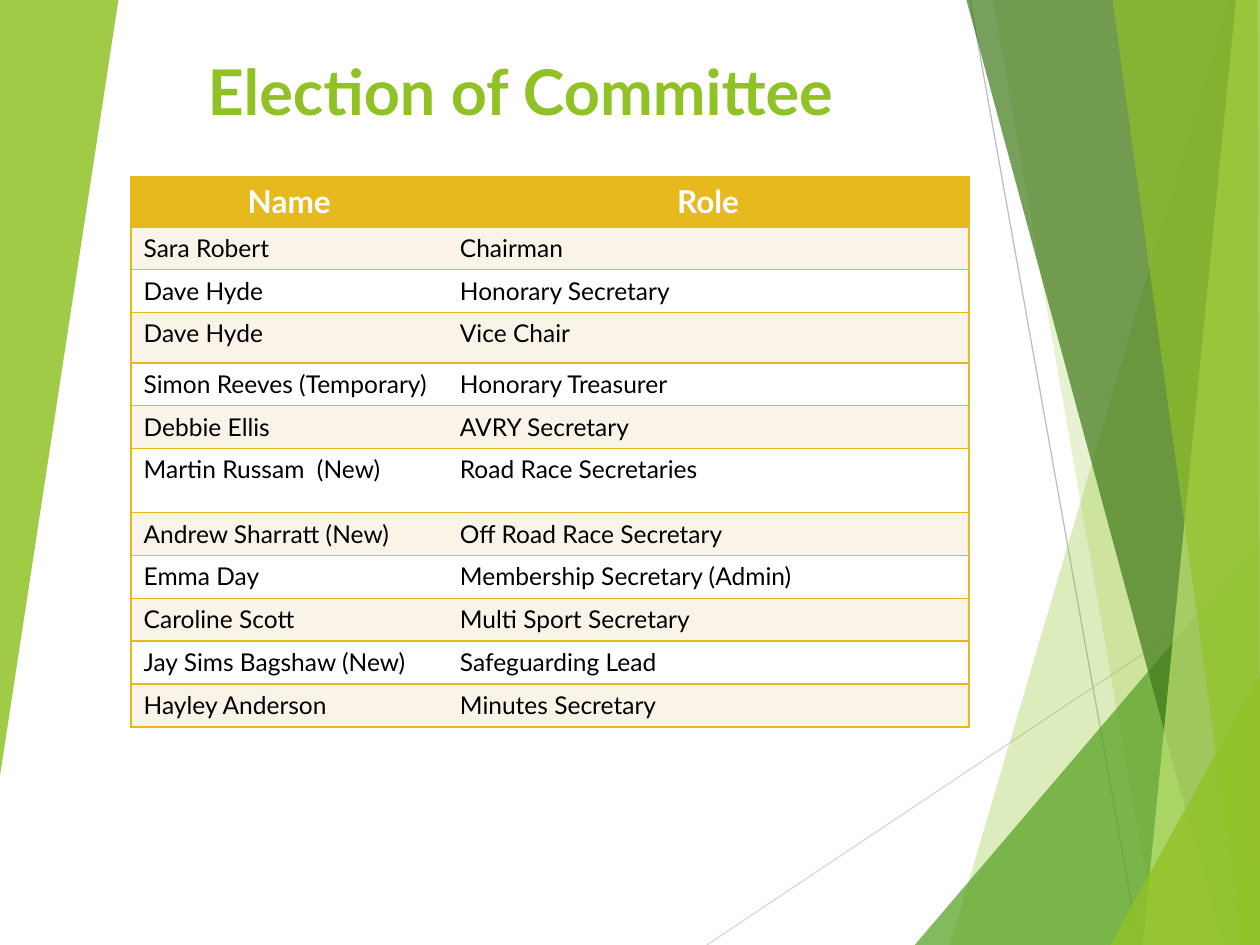
from lxml.etree import SubElement
from pptx import Presentation
from pptx.dml.color import RGBColor
from pptx.enum.shapes import MSO_CONNECTOR
from pptx.enum.text import MSO_ANCHOR, PP_ALIGN
from pptx.oxml.ns import qn
from pptx.util import Inches, Pt

GREEN, GOLD, CREAM, WHITE = "90C226", "E6B91E", "FAF3E8", "FFFFFF"

LINES = [((5.61, 7.5), (10, 4.57), "D9D9D9"),
         ((7.7, 0), (9.04, 7.5), "BFBFBF")]

# Corner points, colour and opacity in percent, from back to front
SHARDS = [
    ([(9.75, 0), (7.54, 7.5), (10, 7.5), (10, 0)], GREEN, 30),
    ([(7.88, 0), (9.19, 7.5), (10, 7.5), (10, 0)], GREEN, 20),
    ([(7.26, 7.5), (10, 4.29), (10, 7.5)], "54A021", 72),
    ([(7.67, 0), (9.7, 7.5), (10, 7.5), (10, 0)], "3F7819", 70),
    ([(9.81, 0), (9.07, 7.5), (10, 7.5), (10, 0)], "C0E474", 70),
    ([(8.83, 0), (9.86, 7.5), (10, 7.5), (9.98, 0)], GREEN, 65),
    ([(8.81, 7.5), (10, 5.35), (10, 7.5)], GREEN, 80),
    ([(0, 0), (0.94, 0), (0, 6.16)], GREEN, 85),
]

ROWS = [
    ("Name", "Role"),
    ("Sara Robert", "Chairman"),
    ("Dave Hyde", "Honorary Secretary"),
    ("Dave Hyde", "Vice Chair"),
    ("Simon Reeves (Temporary)", "Honorary Treasurer"),
    ("Debbie Ellis", "AVRY Secretary"),
    ("Martin Russam  (New)", "Road Race Secretaries"),
    ("Andrew Sharratt (New)", "Off Road Race Secretary"),
    ("Emma Day", "Membership Secretary (Admin)"),
    ("Caroline Scott", "Multi Sport Secretary"),
    ("Jay Sims Bagshaw (New)", "Safeguarding Lead"),
    ("Hayley Anderson", "Minutes Secretary"),
]
WIDTHS = (2.51, 4.14)
HEIGHT = 0.34
TALL = {0: 0.4, 3: 0.4, 6: 0.51}


def rgb(code):
    return RGBColor.from_string(code)


def write(frame, text, size=14, color="000000", bold=False, align=PP_ALIGN.LEFT):
    para = frame.paragraphs[0]
    para.alignment = align
    run = para.add_run()
    run.text = text
    font = run.font
    font.name, font.size, font.bold = "Lato", Pt(size), bold
    font.color.rgb = rgb(color)


def add_line(slide, start, end, color):
    ends = [Inches(v) for v in (*start, *end)]
    line = slide.shapes.add_connector(MSO_CONNECTOR.STRAIGHT, *ends)
    line.line.color.rgb = rgb(color)
    line.line.width = Pt(0.75)
    SubElement(line._element.spPr, qn("a:effectLst"))


def add_shard(slide, points, color, alpha):
    first, *rest = [(Inches(x), Inches(y)) for x, y in points]
    path = slide.shapes.build_freeform(*first)
    path.add_line_segments(rest, close=True)
    shape = path.convert_to_shape()
    shape.shadow.inherit = False
    shape.line.fill.background()
    shape.fill.solid()
    shape.fill.fore_color.rgb = rgb(color)
    tint = shape._element.spPr.find(".//" + qn("a:srgbClr"))
    SubElement(tint, qn("a:alpha"), val=str(alpha * 1000))


def add_title(slide, text):
    box = slide.shapes.add_textbox(Inches(1.55), Inches(0.04), Inches(8.43), Inches(1.03))
    frame = box.text_frame
    frame.word_wrap = True
    frame.vertical_anchor = MSO_ANCHOR.BOTTOM
    write(frame, text, size=36, color=GREEN, bold=True)


def set_edges(cell, hidden):
    props = cell._tc.get_or_add_tcPr()
    for side in ("L", "R", "T", "B"):
        edge = SubElement(props, qn("a:ln" + side), w=str(Pt(1)))
        if side == hidden:
            SubElement(edge, qn("a:noFill"))
        else:
            fill = SubElement(edge, qn("a:solidFill"))
            SubElement(fill, qn("a:srgbClr"), val=GOLD)


def add_roles(slide):
    heights = [TALL.get(i, HEIGHT) for i in range(len(ROWS))]
    table = slide.shapes.add_table(
        len(ROWS), len(WIDTHS), Inches(1.04), Inches(1.4),
        Inches(sum(WIDTHS)), Inches(sum(heights))).table
    table.first_row = table.horz_banding = False
    for col, width in zip(table.columns, WIDTHS):
        col.width = Inches(width)
    for r, (texts, height) in enumerate(zip(ROWS, heights)):
        table.rows[r].height = Inches(height)
        back = GOLD if r == 0 else CREAM if r % 2 else WHITE
        for c, text in enumerate(texts):
            cell = table.cell(r, c)
            # No line between the two columns
            set_edges(cell, hidden="L" if c else "R")
            cell.fill.solid()
            cell.fill.fore_color.rgb = rgb(back)
            if r == 0:
                write(cell.text_frame, text, size=18, color=WHITE,
                      bold=True, align=PP_ALIGN.CENTER)
            else:
                write(cell.text_frame, text)


def main():
    deck = Presentation()
    deck.slide_width, deck.slide_height = Inches(10), Inches(7.5)
    slide = deck.slides.add_slide(deck.slide_layouts[6])
    # Backdrop
    for line in LINES:
        add_line(slide, *line)
    for shard in SHARDS:
        add_shard(slide, *shard)
    # Content
    add_title(slide, "Election of Committee")
    add_roles(slide)
    deck.save("out.pptx")


if __name__ == "__main__":
    main()
